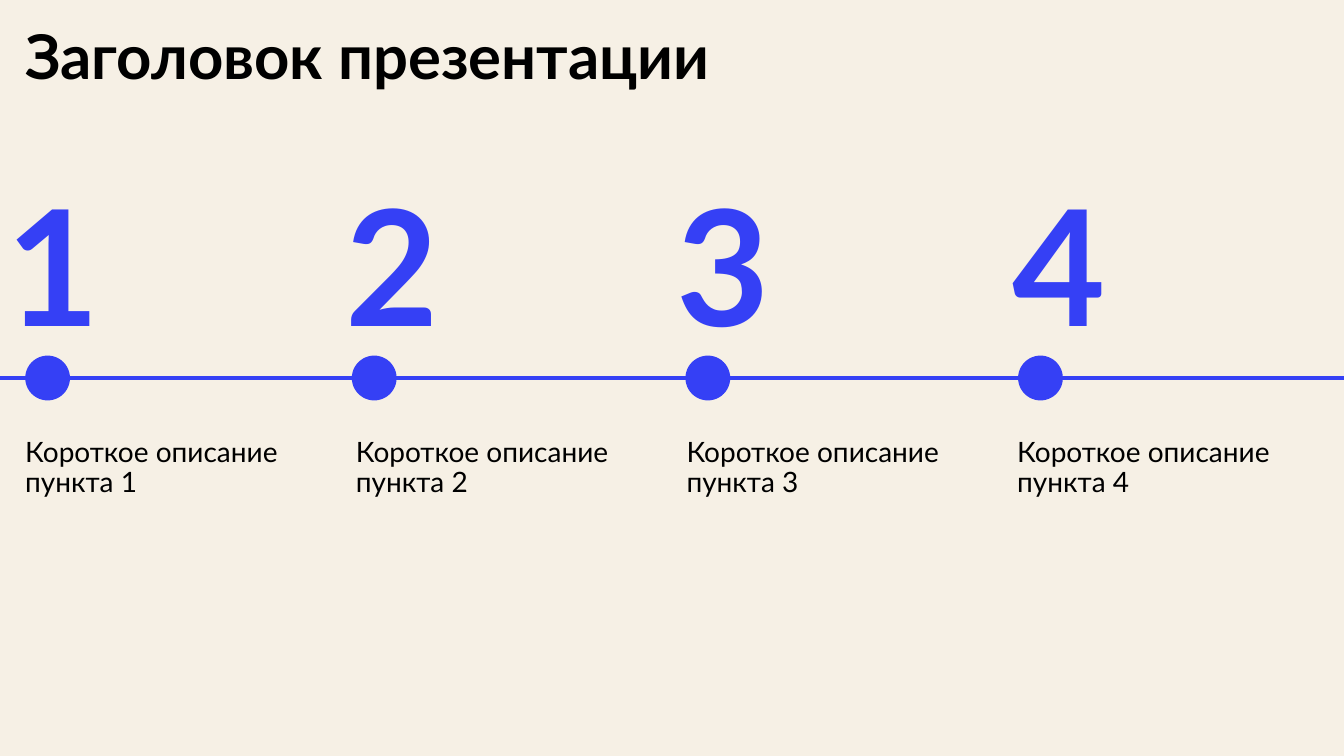
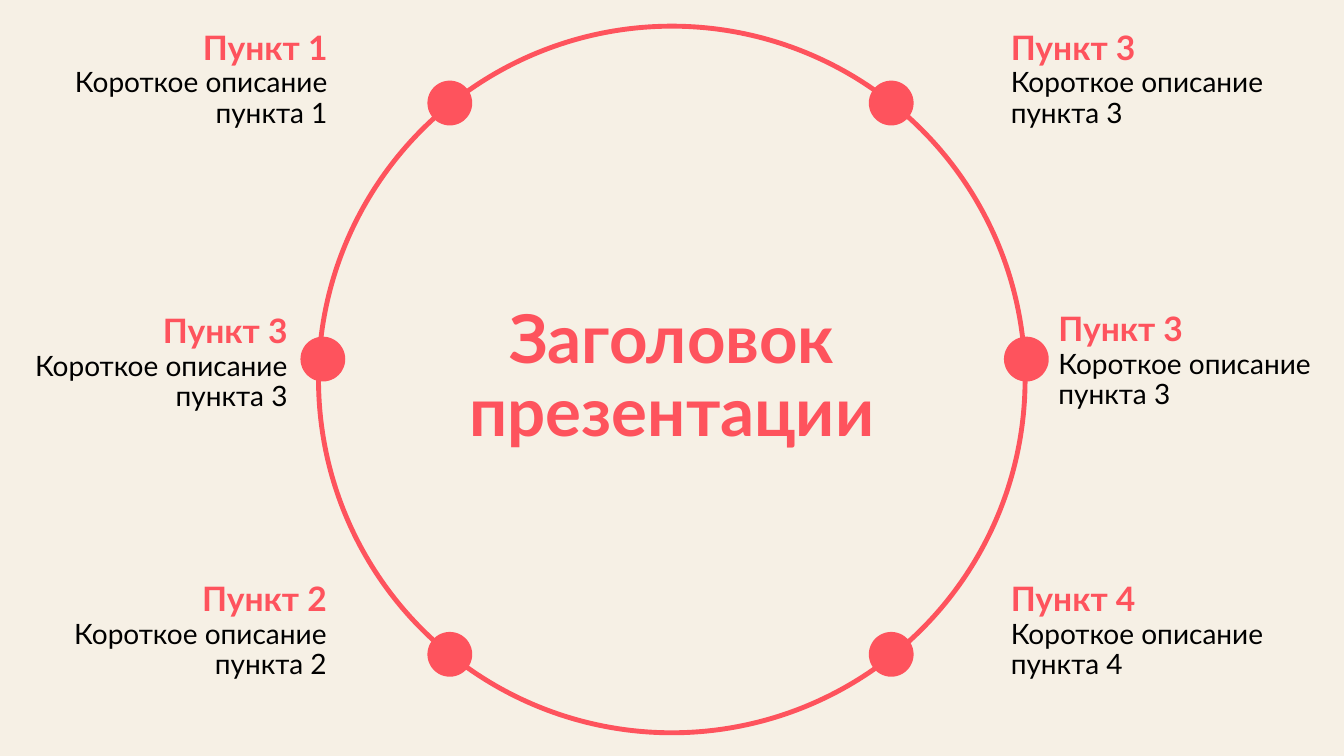
from lxml.etree import SubElement
from pptx import Presentation
from pptx.dml.color import RGBColor
from pptx.enum.shapes import MSO_CONNECTOR as Connector, MSO_SHAPE as Shape
from pptx.enum.text import MSO_ANCHOR as Anchor, MSO_AUTO_SIZE as AutoSize, PP_ALIGN as Align
from pptx.oxml.ns import qn
from pptx.util import Pt

# Shared style
CREAM = RGBColor(0xF6, 0xF0, 0xE5)
BLACK = RGBColor(0x00, 0x00, 0x00)
BLUE = RGBColor(0x35, 0x40, 0xF5)
CORAL = RGBColor(0xFE, 0x53, 0x5D)
FONT = "Lato"
PAGE_WIDTH, PAGE_HEIGHT = 960, 540
LINE_WIDTH = 3.5
DOT = 32
TITLE = "Заголовок презентации"
TITLE_ONLY = 5

# Timeline: left edges of number and dot for each step
STEPS = [(5, 18), (247, 251.3), (483.1, 489.6), (723.6, 727.2)]
STEP_LEFT, STEP_GAP = 18, 236.2

# Ring: number, left, top, width and alignment of each label
LABELS = [
    (1, 18, 22.3, 216, Align.RIGHT),
    (2, 17.5, 416.2, 216, Align.RIGHT),
    (3, 722, 22.3, 216, Align.LEFT),
    (4, 722, 416.2, 216, Align.LEFT),
    (3, 756, 223.4, 188, Align.LEFT),
    (3, 17.5, 224.6, 188, Align.RIGHT),
]
RING_DOTS = [(305.3, 57.6), (620.6, 57.6), (305.3, 451.4), (620.6, 451.4),
             (214.6, 240.5), (717.1, 240.5)]


def format_text(box, text, size, color, bold=False, align=Align.LEFT,
                spacing=0.9, anchor=Anchor.TOP):
    frame = box.text_frame
    frame.word_wrap = True
    frame.auto_size = AutoSize.NONE
    frame.vertical_anchor = anchor
    frame.margin_left = frame.margin_top = frame.margin_right = frame.margin_bottom = 0
    para = frame.paragraphs[0]
    para.text = text
    para.alignment = align
    para.line_spacing = spacing
    font = para.font
    font.name, font.size, font.bold = FONT, Pt(size), bold
    font.color.rgb = color


def add_page(deck, left, top, width, height, size, color, align=Align.LEFT):
    page = deck.slides.add_slide(deck.slide_layouts[TITLE_ONLY])
    title = page.shapes.title
    title.left, title.top, title.width, title.height = map(Pt, (left, top, width, height))
    format_text(title, TITLE, size, color, True, align)
    return page


def add_text(page, left, top, width, height, *style, **options):
    box = page.shapes.add_textbox(Pt(left), Pt(top), Pt(width), Pt(height))
    format_text(box, *style, **options)


def add_description(page, left, top, width, height, number, align=Align.LEFT):
    add_text(page, left, top, width, height,
             f"Короткое описание пункта {number}", 20, BLACK, align=align)


def add_circle(page, left, top, size):
    circle = page.shapes.add_shape(Shape.OVAL, Pt(left), Pt(top), Pt(size), Pt(size))
    circle.shadow.inherit = False
    return circle


def add_dot(page, left, top, color):
    dot = add_circle(page, left, top, DOT)
    dot.fill.solid()
    dot.fill.fore_color.rgb = color
    dot.line.fill.background()


def add_ring(page, left, top, size, color):
    ring = add_circle(page, left, top, size)
    ring.fill.background()
    ring.line.color.rgb = color
    ring.line.width = Pt(LINE_WIDTH)


def add_axis(page, y, color):
    axis = page.shapes.add_connector(Connector.STRAIGHT, 0, Pt(y), Pt(PAGE_WIDTH), Pt(y))
    axis.line.color.rgb = color
    axis.line.width = Pt(LINE_WIDTH)
    SubElement(axis._element.spPr, qn("a:effectLst"))


def add_timeline_page(deck):
    page = add_page(deck, 18, 18.7, 914, 64, 44, BLACK)
    axis_y = PAGE_HEIGHT / 2
    add_axis(page, axis_y, BLUE)
    for index, (number_left, dot_left) in enumerate(STEPS):
        number = index + 1
        add_text(page, number_left, 141, 216, 114, str(number), 115, BLUE, True,
                 spacing=0.8, anchor=Anchor.BOTTOM)
        add_dot(page, dot_left, axis_y - DOT / 2, BLUE)
        add_description(page, STEP_LEFT + index * STEP_GAP, 313.2, 216, 186.5, number)


def add_ring_page(deck):
    page = add_page(deck, 237, 218.2, 486, 114.5, 48, CORAL, Align.CENTER)
    add_ring(page, 227.5, 18.7, 504.7, CORAL)
    for number, left, top, width, align in LABELS:
        add_text(page, left, top, width, 36, f"Пункт {number}", 24, CORAL, True, align)
        add_description(page, left, top + 26.7, width, 59, number, align)
    for left, top in RING_DOTS:
        add_dot(page, left, top, CORAL)


def main():
    deck = Presentation()
    deck.slide_width, deck.slide_height = Pt(PAGE_WIDTH), Pt(PAGE_HEIGHT)
    background = deck.slide_master.background.fill
    background.solid()
    background.fore_color.rgb = CREAM
    add_timeline_page(deck)
    add_ring_page(deck)
    deck.save("out.pptx")


if __name__ == "__main__":
    main()
